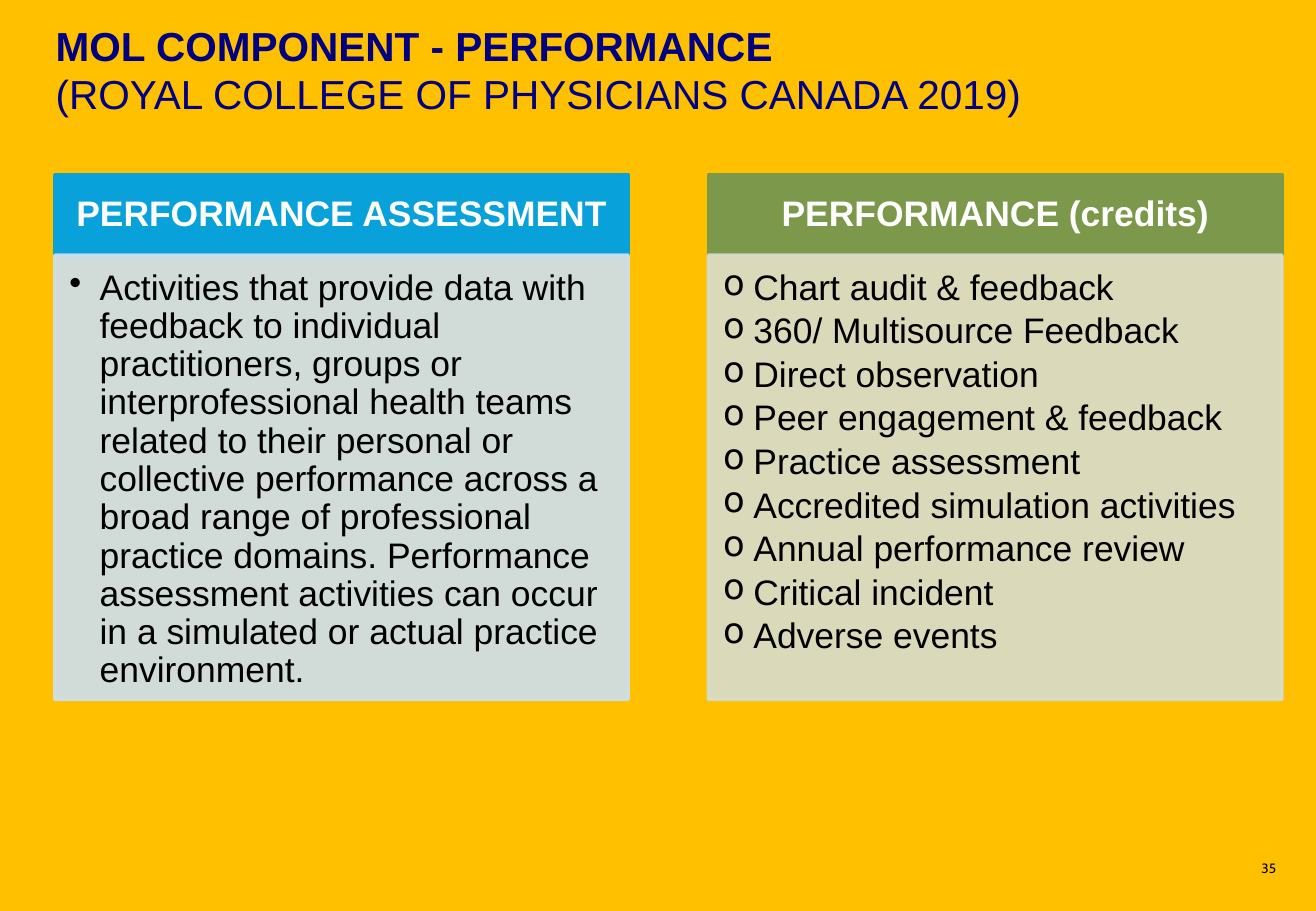
from lxml import etree
from pptx import Presentation
from pptx.dml.color import RGBColor
from pptx.enum.shapes import MSO_SHAPE
from pptx.enum.text import MSO_ANCHOR, PP_ALIGN
from pptx.oxml.ns import qn
from pptx.util import Pt

PX = 9144
RECT, OVAL = MSO_SHAPE.RECTANGLE, MSO_SHAPE.OVAL
TOP, MIDDLE = MSO_ANCHOR.TOP, MSO_ANCHOR.MIDDLE
LEFT, CENTER = PP_ALIGN.LEFT, PP_ALIGN.CENTER

THEME = {
    "background": "FFC000", "title": "000080", "heading": "FFFFFF", "text": "000000",
    "title_size": 24, "panel_size": 21, "number_size": 8,
    "font": "Arial", "number_font": "Cabin",
}

PANELS = [
    {"heading": "PERFORMANCE ASSESSMENT", "dark": "08A1D9", "light": "CCE0F1", "bullet": "•",
     "items": ["Activities that provide data with feedback to individual practitioners, groups or "
               "interprofessional health teams related to their personal or collective performance "
               "across a broad range of professional practice domains. Performance assessment "
               "activities can occur in a simulated or actual practice environment."]},
    {"heading": "PERFORMANCE (credits)", "dark": "7C984A", "light": "D7DDD0", "bullet": "o",
     "items": ["Chart audit & feedback", "360/ Multisource Feedback", "Direct observation",
               "Peer engagement & feedback", "Practice assessment",
               "Accredited simulation activities", "Annual performance review",
               "Critical incident", "Adverse events"]},
]
PANEL_LEFT, PANEL_STEP, PANEL_WIDTH = 45, 538, 472
HEAD_TOP, HEAD_HEIGHT, BODY_HEIGHT = 144, 66, 366


def px(*values):
    """Turn px lengths into EMU."""
    return [v * PX for v in values]


def set_attrs(obj, values):
    """Set each attribute named in a dict of values."""
    for name, value in values.items():
        setattr(obj, name, value)


def set_frame(tf, insets, anchor):
    """Set wrapping, anchor and the left, top, right and bottom insets."""
    left, top, right, bottom = px(*insets)
    set_attrs(tf, {"word_wrap": True, "vertical_anchor": anchor, "margin_left": left,
                   "margin_top": top, "margin_right": right, "margin_bottom": bottom})


def add_run(p, text, size, color, bold=False, font=THEME["font"]):
    """Add a run of formatted text to a paragraph."""
    r = p.add_run()
    r.text = text
    set_attrs(r.font, {"size": Pt(size), "bold": bold, "name": font})
    r.font.color.rgb = RGBColor.from_string(color)


def add_block(s, kind, box, color=None, opacity=100):
    """Add a preset shape, filled and outlined in one colour or left clear."""
    sp = s.shapes.add_shape(kind, *px(*box))
    sp.shadow.inherit = False
    if color is None:
        sp.fill.background()
        sp.line.fill.background()
        return sp
    sp.line.width = Pt(2)
    sp.fill.solid()
    for fill in (sp.fill, sp.line.fill):
        fill.solid()
        fill.fore_color.rgb = RGBColor.from_string(color)
    if opacity < 100:
        for clr in sp._element.spPr.iter(qn("a:srgbClr")):
            etree.SubElement(clr, qn("a:alpha"), val=str(opacity * 1000))
    return sp


def add_bullet(p, char):
    """Give a paragraph a hanging bullet."""
    pPr = p._p.get_or_add_pPr()
    pPr.set("marL", str(25 * PX))
    pPr.set("indent", str(-25 * PX))
    etree.SubElement(pPr, qn("a:buChar"), char=char)


def add_title(s, first, second):
    """Add the two-line title, bold then regular."""
    tf = s.shapes.add_textbox(*px(36, 12, 891, 101)).text_frame
    set_frame(tf, (10, 5, 10, 5), TOP)
    p = tf.paragraphs[0]
    add_run(p, first, THEME["title_size"], THEME["title"], True)
    p.add_line_break()
    add_run(p, second, THEME["title_size"], THEME["title"])


def add_panel(s, left, panel):
    """Add a heading bar with a bulleted body below it."""
    size = THEME["panel_size"]
    head = add_block(s, RECT, (left, HEAD_TOP, PANEL_WIDTH, HEAD_HEIGHT), panel["dark"])
    set_frame(head.text_frame, (16, 9, 16, 9), MIDDLE)
    p = head.text_frame.paragraphs[0]
    set_attrs(p, {"alignment": CENTER, "line_spacing": 0.9})
    add_run(p, panel["heading"], size, THEME["heading"], True)

    body = add_block(s, RECT, (left, HEAD_TOP + HEAD_HEIGHT, PANEL_WIDTH, BODY_HEIGHT),
                     panel["light"], 90)
    tf = body.text_frame
    set_frame(tf, (12, 12, 16, 18), TOP)
    for i, item in enumerate(panel["items"]):
        p = tf.add_paragraph() if i else tf.paragraphs[0]
        add_bullet(p, panel["bullet"])
        set_attrs(p, {"alignment": LEFT, "line_spacing": 0.9, "space_after": Pt(size * 0.15)})
        add_run(p, item, size, THEME["text"])


def add_number(s, number):
    """Add the slide number in a clear oval."""
    tf = add_block(s, OVAL, (1017, 695, 77, 55)).text_frame
    set_frame(tf, (10, 5, 10, 5), TOP)
    p = tf.paragraphs[0]
    p.alignment = LEFT
    add_run(p, number, THEME["number_size"], THEME["text"], font=THEME["number_font"])


def main():
    """Build the slide and save it."""
    prs = Presentation()
    prs.slide_width, prs.slide_height = px(1083, 750)
    s = prs.slides.add_slide(prs.slide_layouts[6])
    s.background.fill.solid()
    s.background.fill.fore_color.rgb = RGBColor.from_string(THEME["background"])
    add_title(s, "MOL COMPONENT - PERFORMANCE", "(ROYAL COLLEGE OF PHYSICIANS CANADA 2019)")
    add_number(s, "35")
    for i, panel in enumerate(PANELS):
        add_panel(s, PANEL_LEFT + i * PANEL_STEP, panel)
    prs.save("out.pptx")


if __name__ == "__main__":
    main()
